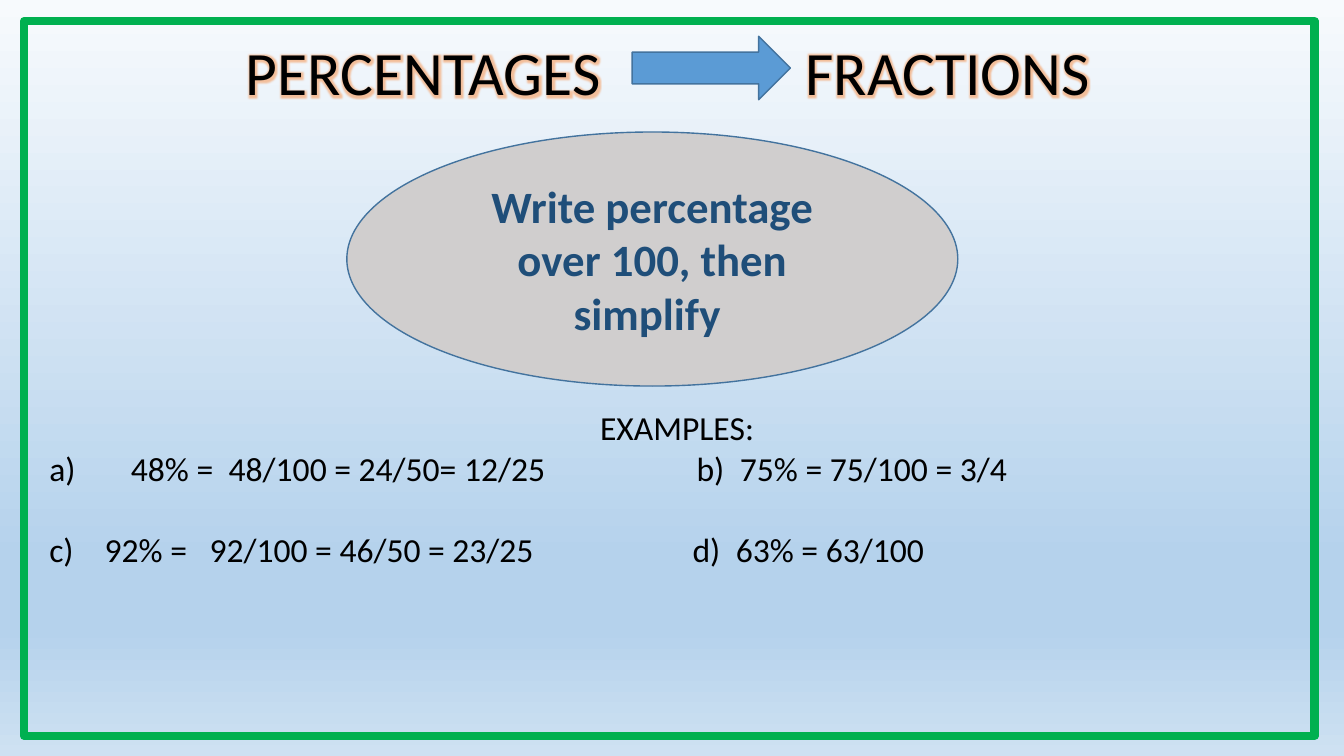
from dataclasses import dataclass

import pptx
import pptx.dml.color
import pptx.enum.shapes
import pptx.enum.text
import pptx.oxml
import pptx.oxml.ns
import pptx.util
from pptx.util import Inches

COLOURS = {
    "text": "000000",
    "glow": "F4B183",
    "frame": "00B050",
    "arrow": "5B9BD5",
    "outline": "43739E",
    "oval": "D0CECE",
    "rule": "1F4E79",
    "rule_edge": "5093CF",
}
BACKGROUND_STOPS = [(0, "F7FAFD"), (74, "B5D2EC"), (83, "B5D2EC"), (100, "CEE1F2")]
FONT = "Calibri"
NS = pptx.oxml.ns.nsdecls("a")
SHAPES = pptx.enum.shapes.MSO_SHAPE
CENTER = pptx.enum.text.PP_ALIGN.CENTER


@dataclass
class Box:
    left: float
    top: float
    width: float
    height: float

    def lengths(self) -> list:
        return [Inches(v) for v in (self.left, self.top, self.width, self.height)]


@dataclass
class Figure:
    preset: int
    box: Box
    fill: str | None
    line: str
    weight: float


@dataclass
class Title:
    text: str
    box: Box
    wrap: bool


@dataclass
class ExampleRow:
    text: str
    tabs: list[float]
    space_before: float


ARROW = Figure(SHAPES.RIGHT_ARROW, Box(6.27, 0.36, 1.57, 0.63), "arrow", "outline", 1)
FRAME = Figure(SHAPES.RECTANGLE, Box(0.24, 0.21, 12.8, 7.09), None, "frame", 6)
OVAL = Figure(SHAPES.OVAL, Box(3.44, 1.31, 6.06, 2.52), "oval", "outline", 1)
TITLES = [
    Title("PERCENTAGES", Box(2.34, 0.29, 3.76, 0.84), False),
    Title("FRACTIONS", Box(7.89, 0.29, 3.43, 0.84), True),
]
EXAMPLES_BOX = Box(0.39, 3.99, 12.65, 1.72)
EXAMPLE_ROWS = [
    ExampleRow("a)\t48% =\t48/100 = 24/50= 12/25\tb)\t75% = 75/100 = 3/4",
               [0.81, 1.78, 6.42, 6.85], 0),
    ExampleRow("c)\t92% =\t92/100 = 46/50 = 23/25\td)\t63% = 63/100",
               [0.55, 1.59, 6.38, 6.81], 29),
]


def rgb(name: str) -> pptx.dml.color.RGBColor:
    return pptx.dml.color.RGBColor.from_string(COLOURS[name])


def paint_background(slide) -> None:
    fill = slide.background.fill
    fill.gradient()
    fill.gradient_angle = 270
    stops = slide.background._cSld.find(".//" + pptx.oxml.ns.qn("a:gsLst"))
    for stop in list(stops):
        stops.remove(stop)
    for percent, colour in BACKGROUND_STOPS:
        stops.append(pptx.oxml.parse_xml(
            f'<a:gs {NS} pos="{percent * 1000}"><a:srgbClr val="{colour}"/></a:gs>'))


def draw_figure(slide, figure: Figure):
    shape = slide.shapes.add_shape(figure.preset, *figure.box.lengths())
    shape.shadow.inherit = False
    if figure.fill:
        shape.fill.solid()
        shape.fill.fore_color.rgb = rgb(figure.fill)
    else:
        shape.fill.background()
    shape.line.color.rgb = rgb(figure.line)
    shape.line.width = pptx.util.Pt(figure.weight)
    return shape


def write(paragraph, text: str, size: float, colour: str = "text", bold: bool = False):
    paragraph.text = text
    run = paragraph.runs[0]
    run.font.size = pptx.util.Pt(size)
    run.font.name = FONT
    run.font.bold = bold
    run.font.color.rgb = rgb(colour)
    return run


def draw_title(slide, title: Title) -> None:
    frame = slide.shapes.add_textbox(*title.box.lengths()).text_frame
    frame.word_wrap = title.wrap
    run = write(frame.paragraphs[0], title.text, 44)
    # Soft glow, placed straight after the text fill
    properties = run.font._element
    properties.find(pptx.oxml.ns.qn("a:solidFill")).addnext(pptx.oxml.parse_xml(
        f'<a:effectLst {NS}><a:glow rad="63500"><a:srgbClr val="{COLOURS["glow"]}">'
        '<a:alpha val="80000"/></a:srgbClr></a:glow></a:effectLst>'))


def draw_rule(slide) -> None:
    frame = draw_figure(slide, OVAL).text_frame
    frame.word_wrap = True
    frame.vertical_anchor = pptx.enum.text.MSO_ANCHOR.MIDDLE
    paragraph = frame.paragraphs[0]
    paragraph.alignment = CENTER
    run = write(paragraph, "Write percentage over 100, then simplify ", 32, "rule", True)
    run.font._element.insert(0, pptx.oxml.parse_xml(
        f'<a:ln {NS} w="10541"><a:solidFill><a:srgbClr val="{COLOURS["rule_edge"]}"/>'
        '</a:solidFill></a:ln>'))


def draw_examples(slide) -> None:
    frame = slide.shapes.add_textbox(*EXAMPLES_BOX.lengths()).text_frame
    frame.word_wrap = True
    heading = frame.paragraphs[0]
    heading.alignment = CENTER
    write(heading, "EXAMPLES:", 24)
    for row in EXAMPLE_ROWS:
        paragraph = frame.add_paragraph()
        write(paragraph, row.text, 24)
        paragraph.space_before = pptx.util.Pt(row.space_before)
        stops = "".join(f'<a:tab pos="{Inches(tab)}" algn="l"/>' for tab in row.tabs)
        paragraph._p.get_or_add_pPr().append(
            pptx.oxml.parse_xml(f"<a:tabLst {NS}>{stops}</a:tabLst>"))


def main() -> None:
    deck = pptx.Presentation()
    deck.slide_width, deck.slide_height = Inches(13.33), Inches(7.5)
    slide = deck.slides.add_slide(deck.slide_layouts[6])
    paint_background(slide)

    # Heading line: percentages to fractions
    draw_title(slide, TITLES[0])
    draw_figure(slide, ARROW)
    draw_title(slide, TITLES[1])

    # Frame, rule and worked examples
    draw_figure(slide, FRAME)
    draw_rule(slide)
    draw_examples(slide)
    deck.save("out.pptx")


if __name__ == "__main__":
    main()
